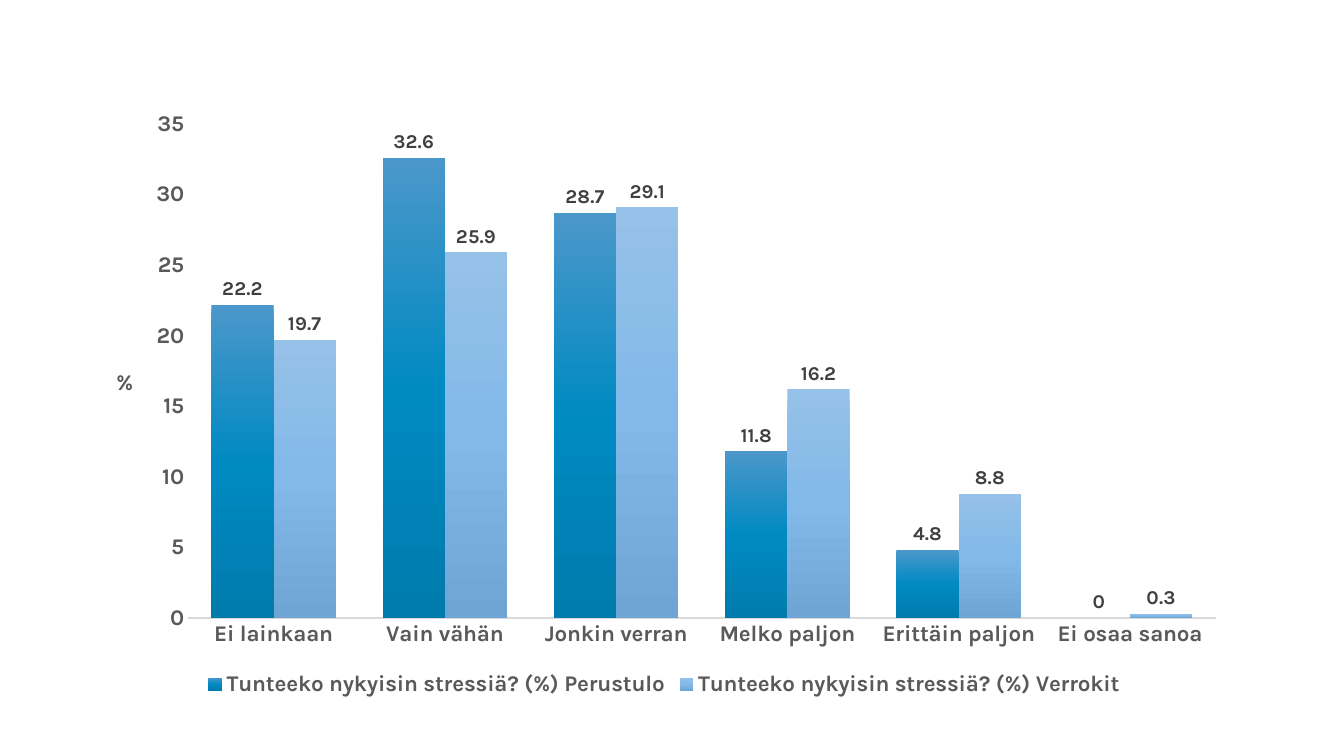
from lxml import etree
from pptx import Presentation, util as u
from pptx.chart.data import CategoryChartData
from pptx.dml.color import RGBColor
from pptx.enum import chart as ch
from pptx.oxml.ns import qn

FONT = "Karla"
COLORS = {"axis_text": "595959", "axis_line": "D9D9D9", "label": "404040", "base": "000000"}
ANSWERS = ["Ei lainkaan", "Vain vähän", "Jonkin verran",
           "Melko paljon", "Erittäin paljon", "Ei osaa sanoa"]
QUESTION = "Tunteeko nykyisin stressiä? (%)"
# group, shares, gradient from top to bottom
GROUPS = [
    ("Perustulo", (22.2, 32.6, 28.7, 11.8, 4.8, 0), ("4B97CA", "008AC2", "007BAD")),
    ("Verrokit", (19.7, 25.9, 29.1, 16.2, 8.8, 0.3), ("96C1E8", "82B9E9", "6EA5D5")),
]
UNIT = "%"
CHART_BOX = (64, 71.3, 820.8, 429.8)
PLOT_BOX = (134.3, 88.6, 734.1, 352.8)
UNIT_POSITION = (80, 260)


def style(font, size, color="axis_text", bold=True):
    font.name, font.size, font.bold = FONT, u.Pt(size), bold
    font.color.rgb = RGBColor.from_string(COLORS[color])


def write_title(frame, content, **look):
    frame.text = content
    style(frame.paragraphs[0].runs[0].font, **look)


def child(parent, tag, **attributes):
    return etree.SubElement(parent, qn(tag), {k: str(v) for k, v in attributes.items()})


def place(part, left, top, width=None, height=None, inner=False):
    """Fix a chart part at a slide position in points."""
    for old in part.findall(qn("c:layout")):
        part.remove(old)
    layout = etree.Element(qn("c:layout"))
    manual = child(layout, "c:manualLayout")
    if inner:
        child(manual, "c:layoutTarget", val="inner")
    child(manual, "c:xMode", val="edge")
    child(manual, "c:yMode", val="edge")
    x, y, w, h = CHART_BOX
    child(manual, "c:x", val=round((left - x) / w, 4))
    child(manual, "c:y", val=round((top - y) / h, 4))
    if width:
        child(manual, "c:w", val=round(width / w, 4))
        child(manual, "c:h", val=round(height / h, 4))
    text = part.find(qn("c:tx"))
    part.insert(0 if text is None else 1, layout)


def shade(series, stops):
    """Fill the columns with an even vertical gradient."""
    properties = series.format.fill and series._element.get_or_add_spPr()
    gradient = child(properties, "a:gradFill", rotWithShape=1)
    stop_list = child(gradient, "a:gsLst")
    for i, color in enumerate(stops):
        stop = child(stop_list, "a:gs", pos=i * 100000 // (len(stops) - 1))
        child(stop, "a:srgbClr", val=color)
    child(gradient, "a:lin", ang=5400000, scaled=0)


def main():
    deck = Presentation()
    deck.slide_width, deck.slide_height = u.Pt(960), u.Pt(540)
    slide = deck.slides.add_slide(deck.slide_layouts[6])

    data = CategoryChartData()
    data.categories = ANSWERS
    for group, shares, _ in GROUPS:
        data.add_series(f"{QUESTION} {group}", shares)
    chart = slide.shapes.add_chart(ch.XL_CHART_TYPE.COLUMN_CLUSTERED,
                                   *map(u.Pt, CHART_BOX), data).chart
    style(chart.font, 10, "base", bold=False)
    chart.has_title = False

    chart.has_legend = True
    chart.legend.position = ch.XL_LEGEND_POSITION.BOTTOM
    chart.legend.include_in_layout = False
    style(chart.legend.font, 16)

    answers, shares = chart.category_axis, chart.value_axis
    for axis in (answers, shares):
        axis.major_tick_mark = axis.minor_tick_mark = ch.XL_TICK_MARK.NONE
        axis.has_major_gridlines = False
        style(axis.tick_labels.font, 16)
    answers.format.line.color.rgb = RGBColor.from_string(COLORS["axis_line"])
    answers.format.line.width = u.Pt(1)
    shares.format.line.fill.background()
    shares.minimum_scale, shares.maximum_scale, shares.major_unit = 0, 35, 5

    unit = shares.axis_title
    write_title(unit.text_frame, UNIT, size=16)
    unit.text_frame._txBody.find(qn("a:bodyPr")).set("rot", "0")
    place(unit._element, *UNIT_POSITION)

    plot = chart.plots[0]
    plot.gap_width, plot.overlap, plot.vary_by_categories = 75, 0, False
    for series, (_, _, stops) in zip(plot.series, GROUPS):
        shade(series, stops)
        labels = series.data_labels
        labels.show_value = True
        labels.position = ch.XL_LABEL_POSITION.OUTSIDE_END
        style(labels.font, 14, "label")
    place(chart._chartSpace.chart.plotArea, *PLOT_BOX, inner=True)

    deck.save("out.pptx")


if __name__ == "__main__":
    main()
